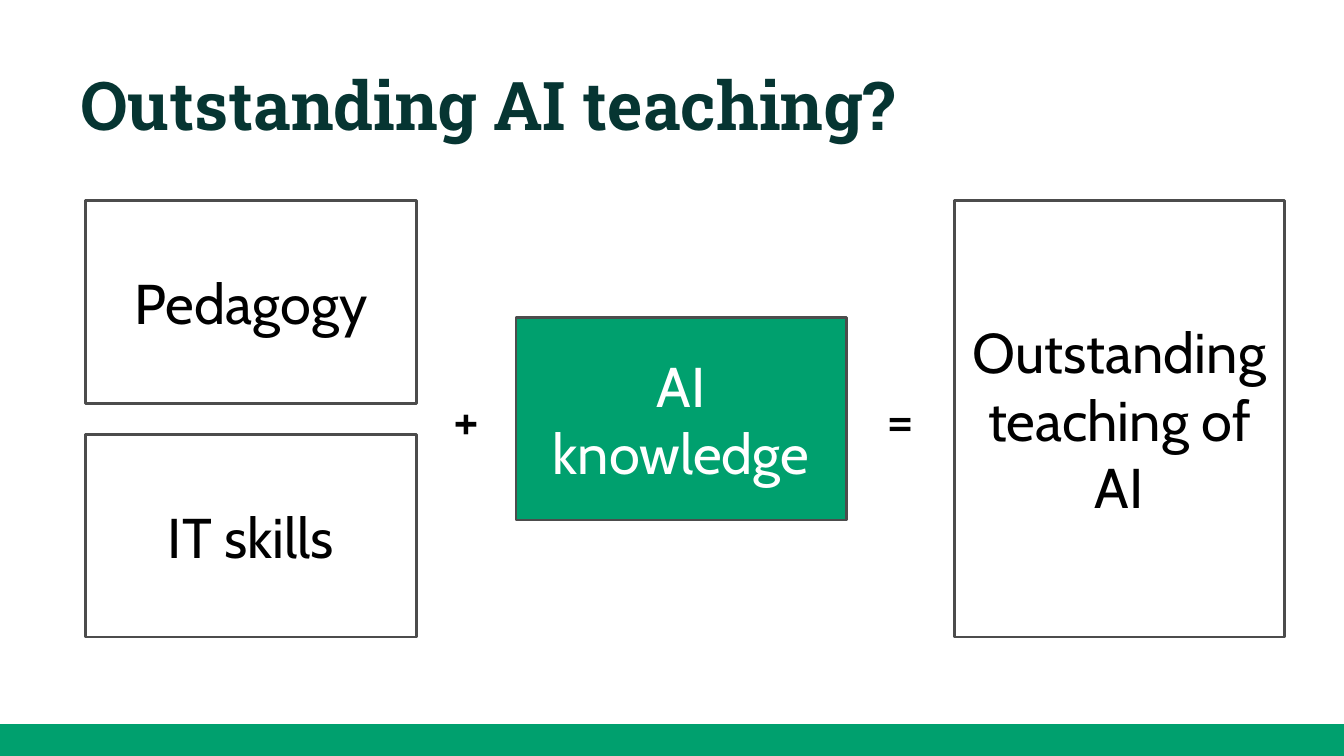
from pptx import Presentation
from pptx.dml.color import RGBColor
from pptx.enum.shapes import MSO_SHAPE as Shape
from pptx.enum.text import MSO_ANCHOR as Anchor, PP_ALIGN as Align
from pptx.util import Pt

GREEN = "00A06E"
DARK_GREEN = "063532"
GREY = "4C4C4C"
BLACK = "000000"
WHITE = "FFFFFF"

CARD_WIDTH = 177
CARD_HEIGHT = 108.7
ROW_GAP = 16.6
TOP = 107.3
FULL_HEIGHT = 2 * CARD_HEIGHT + ROW_GAP
MIDDLE = TOP + FULL_HEIGHT / 2
SKILLS_LEFT, KNOWLEDGE_LEFT, RESULT_LEFT = 46, 276.5, 511.2


def colour(code):
    return RGBColor.from_string(code)


def write(holder, words, size, ink, font="Cabin", bold=False,
          align=Align.CENTER, anchor=Anchor.MIDDLE):
    frame = holder.text_frame
    frame.word_wrap = True
    frame.vertical_anchor = anchor
    frame.margin_left = frame.margin_right = Pt(7.2)
    frame.margin_top = frame.margin_bottom = Pt(7.2)
    paragraph = frame.paragraphs[0]
    paragraph.alignment = align
    run = paragraph.add_run()
    run.text = words
    run.font.name = font
    run.font.size = Pt(size)
    run.font.bold = bold
    run.font.color.rgb = colour(ink)


def add_box(slide, left, top, width, height, fill, outline, weight):
    box = slide.shapes.add_shape(
        Shape.RECTANGLE, Pt(left), Pt(top), Pt(width), Pt(height))
    box.shadow.inherit = False
    box.fill.solid()
    box.fill.fore_color.rgb = colour(fill)
    box.line.color.rgb = colour(outline)
    box.line.width = Pt(weight)
    return box


def add_card(slide, words, left, top, height=CARD_HEIGHT, fill=WHITE, ink=BLACK):
    card = add_box(slide, left, top, CARD_WIDTH, height, fill, GREY, 1.5)
    write(card, words, 30, ink)


def add_label(slide, words, left, top, width, height, size, ink, **style):
    label = slide.shapes.add_textbox(Pt(left), Pt(top), Pt(width), Pt(height))
    write(label, words, size, ink, **style)


def add_operator(slide, sign, left):
    add_label(slide, sign, left, MIDDLE - 18.5, 39, 36, 30, BLACK)


def main():
    deck = Presentation()
    deck.slide_width, deck.slide_height = Pt(720), Pt(405)
    slide = deck.slides.add_slide(deck.slide_layouts[6])

    add_box(slide, 0, 388, 720, 17, GREEN, GREEN, 0.75)
    add_label(slide, "Outstanding AI teaching?", 36, 16.6, 560, 67.7, 36, DARK_GREEN,
              font="Roboto Slab", bold=True, align=Align.LEFT, anchor=Anchor.BOTTOM)

    for row, skill in enumerate(["Pedagogy", "IT skills"]):
        add_card(slide, skill, SKILLS_LEFT, TOP + row * (CARD_HEIGHT + ROW_GAP))
    add_card(slide, "Outstanding teaching of AI", RESULT_LEFT, TOP, FULL_HEIGHT)
    add_operator(slide, "+", 230.4)
    add_operator(slide, "=", 463)
    add_card(slide, "AI knowledge", KNOWLEDGE_LEFT, MIDDLE - CARD_HEIGHT / 2,
             fill=GREEN, ink=WHITE)

    deck.save("out.pptx")


if __name__ == "__main__":
    main()
